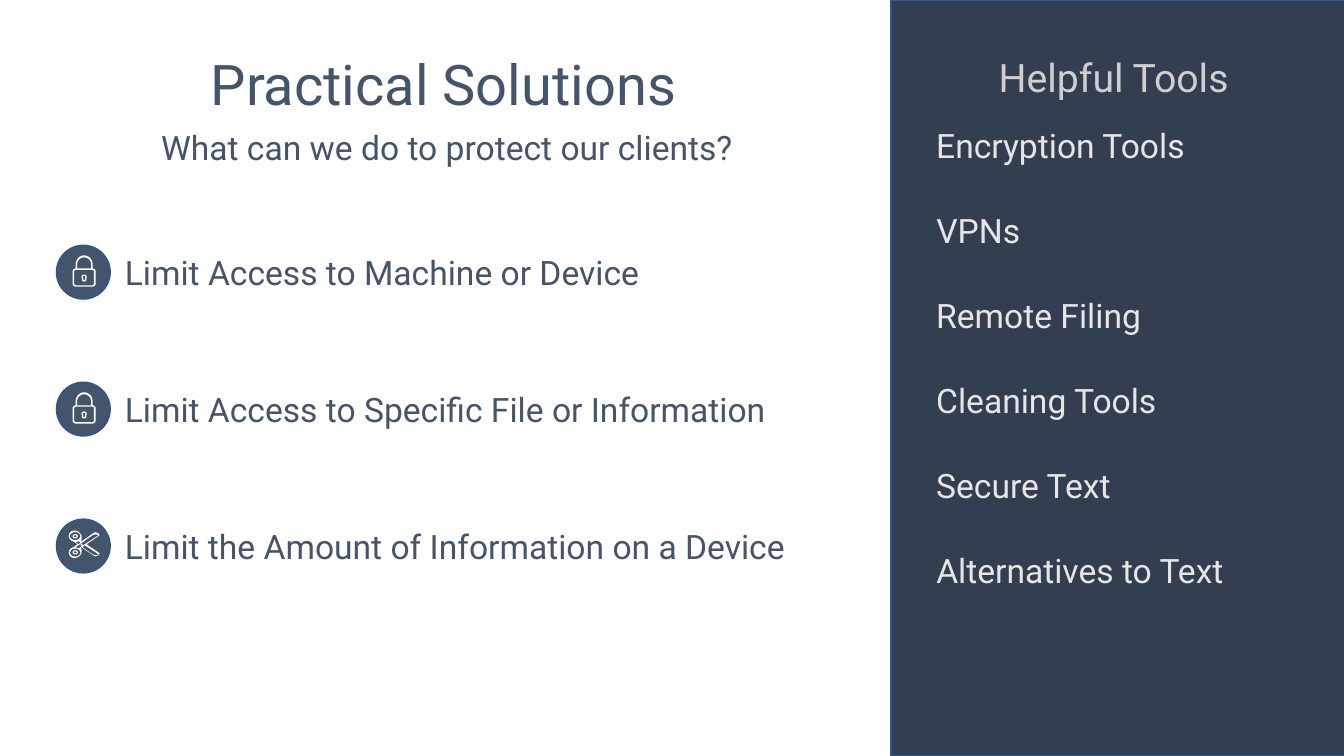
import math
from dataclasses import dataclass

import pptx
import pptx.dml.color
import pptx.enum.shapes
import pptx.enum.text
import pptx.util

COLS, ROWS = 160, 90
CELL = pptx.util.Inches(7.5) / ROWS
UNIT = CELL * 0.12  # icon drawing unit
SLATE, NAVY, BLUE = "44546A", "333F50", "325491"
WHITE, PALE, GREY = "FFFFFF", "E7E6E6", "D0CECE"
FONT = "Roboto"

Point = tuple[float, float]
Path = list[Point]


@dataclass
class Label:
    text: str
    col: float
    row: float
    wide: float
    high: float = 6
    size: float = 24
    tint: str = SLATE
    wrap: bool = False


@dataclass
class Advice:
    text: str
    wide: float
    icon: list[Path]


@dataclass
class Tool:
    text: str
    wide: float


def cells(count: float) -> int:
    return round(count * CELL)


def color(code: str) -> pptx.dml.color.RGBColor:
    return pptx.dml.color.RGBColor.from_string(code)


def apply(target, values: dict) -> None:
    for name, value in values.items():
        setattr(target, name, value)


def place(shape, col: float, row: float, wide: float, high: float) -> None:
    apply(shape, {"left": cells(col), "top": cells(row),
                  "width": cells(wide), "height": cells(high)})


def arc(x: float, y: float, across: float, down: float,
        start: int = 0, stop: int = 360) -> Path:
    """Points on an ellipse, clockwise, with angles in degrees."""
    turns = [math.radians(angle) for angle in range(start, stop + 1, 15)]
    return [(x + across * math.cos(turn), y + down * math.sin(turn))
            for turn in turns]


def body(left: float, top: float, right: float, low: float,
         bend: float) -> Path:
    """Rounded box, drawn clockwise from the top right corner."""
    spots = [(right - bend, top + bend), (right - bend, low - bend),
             (left + bend, low - bend), (left + bend, top + bend)]
    return [point for turn, (x, y) in enumerate(spots)
            for point in arc(x, y, bend, bend, 90 * turn - 90, 90 * turn)]


def flip(points: Path) -> Path:
    """Mirror about the middle of the icon, keeping a joined outline."""
    return [(x, 50 - y) for x, y in reversed(points)]


def lock() -> list[Path]:
    return [
        arc(27.5, 19, 8.5, 9, 180, 360) + body(16, 23, 39, 41, 3),
        arc(27.5, 19, 7, 7, 180, 360) + [(34.5, 23), (20.5, 23)],
        body(17.7, 24.3, 37.3, 39.7, 1.7),
        arc(27.5, 31.5, 2.6, 2.5, 135, 405) + arc(27.5, 34, 2.3, 2, 0, 180),
        arc(27.5, 31.5, 1.3, 1.2, 135, 405) + arc(27.5, 34, 0.8, 0.8, 0, 180),
    ]


def shears() -> list[Path]:
    half = [(30, 25), (43, 16), (41.5, 14), (39, 13), (37, 13.8), (25, 22),
            (24.3, 21.2), (25, 20), (25, 16.5), (23.5, 13.8), (21, 12),
            (18, 11.2), (15, 12), (13, 14), (12.2, 16.5), (13, 19.5),
            (15, 21.3), (18, 22.8), (21, 25)]
    hoop = arc(18.7, 16.8, 5.1, 4, 0, 360)
    rings = [hoop, arc(18.7, 17, 2.6, 2.1), arc(18.7, 17, 1.4, 1)]
    return [
        half + flip(half), *rings, *map(flip, rings),
        [(22, 29), (19, 28), (36, 16), (39, 15), (42, 16)],
        [(42, 35), (39, 36), (36, 35), (26, 28), (28, 26)],
        [(19, 23), (22, 22), (24, 23), (22, 25)],
        arc(25, 25.5, 1, 0.8),
    ]


def paint(shape, fill: str, edge: str = "") -> None:
    shape.shadow.inherit = False
    shape.fill.solid()
    shape.fill.fore_color.rgb = color(fill)
    if edge:
        shape.line.color.rgb = color(edge)
        shape.line.width = pptx.util.Pt(1)
    else:
        shape.line.fill.background()


def write(shape, label: Label) -> None:
    place(shape, label.col, label.row, label.wide, label.high)
    frame = shape.text_frame
    frame.text = label.text
    apply(frame, {
        "word_wrap": label.wrap,
        "auto_size": pptx.enum.text.MSO_AUTO_SIZE.SHAPE_TO_FIT_TEXT,
        "vertical_anchor": pptx.enum.text.MSO_ANCHOR.TOP,
    })
    line = frame.paragraphs[0]
    apply(line, {"alignment": pptx.enum.text.PP_ALIGN.LEFT,
                 "line_spacing": 1.0, "space_before": pptx.util.Pt(0)})
    font = line.runs[0].font
    apply(font, {"name": FONT, "size": pptx.util.Pt(label.size)})
    font.color.rgb = color(label.tint)


def add_text(slide, label: Label) -> None:
    write(slide.shapes.add_textbox(0, 0, 0, 0), label)


def add_form(slide, kind, col: float, row: float, wide: float, high: float,
             fill: str) -> None:
    shape = slide.shapes.add_shape(kind, 0, 0, 0, 0)
    place(shape, col, row, wide, high)
    paint(shape, fill, BLUE)


def add_icon(slide, paths: list[Path], col: float, row: float) -> None:
    pen = None
    for points in paths:
        (x, y), *rest = [(px * UNIT, py * UNIT) for px, py in points]
        if pen is None:
            pen = slide.shapes.build_freeform(x, y)
        else:
            pen.move_to(x, y)
        pen.add_line_segments(rest, close=True)
    paint(pen.convert_to_shape(cells(col), cells(row)), WHITE)


ADVICE = [
    Advice("Limit Access to Machine or Device", 64.92, lock()),
    Advice("Limit Access to Specific File or Information", 80.4, lock()),
    Advice("Limit the Amount of Information on a Device", 82.44, shears()),
]
TOOLS = [
    Tool("Encryption Tools", 33.96), Tool("VPNs", 12.6),
    Tool("Remote Filing", 27.24), Tool("Cleaning Tools", 30.48),
    Tool("Secure Text", 24), Tool("Alternatives to Text", 37.8),
]


def main() -> None:
    deck = pptx.Presentation()
    apply(deck, {"slide_width": cells(COLS), "slide_height": cells(ROWS)})
    slide = deck.slides.add_slide(deck.slide_layouts[5])
    kinds = pptx.enum.shapes.MSO_SHAPE

    add_form(slide, kinds.RECTANGLE, 106.08, 0, 54.24, ROWS, NAVY)
    write(slide.shapes.title,
          Label("Practical Solutions", 23.9, 5.3, 60, 9.24, 40))
    add_text(slide, Label("What can we do to protect our clients?",
                          18, 14.5, 71.76, wrap=True))
    add_text(slide, Label("Helpful Tools", 117.72, 5.76, 31.08, 6.84, 28, GREY))

    for index, item in enumerate(ADVICE):
        row = 29.4 + 16.3 * index
        add_text(slide, Label(item.text, 13.68, row, item.wide))
        add_form(slide, kinds.OVAL, 6.72, row - 0.2, 6.4, 6.4, SLATE)
        add_icon(slide, item.icon, 6.72, row - 0.2)

    for index, tool in enumerate(TOOLS):
        add_text(slide, Label(tool.text, 110.28, 14.28 + 10.13 * index,
                              tool.wide, tint=PALE))

    deck.save("out.pptx")


if __name__ == "__main__":
    main()
